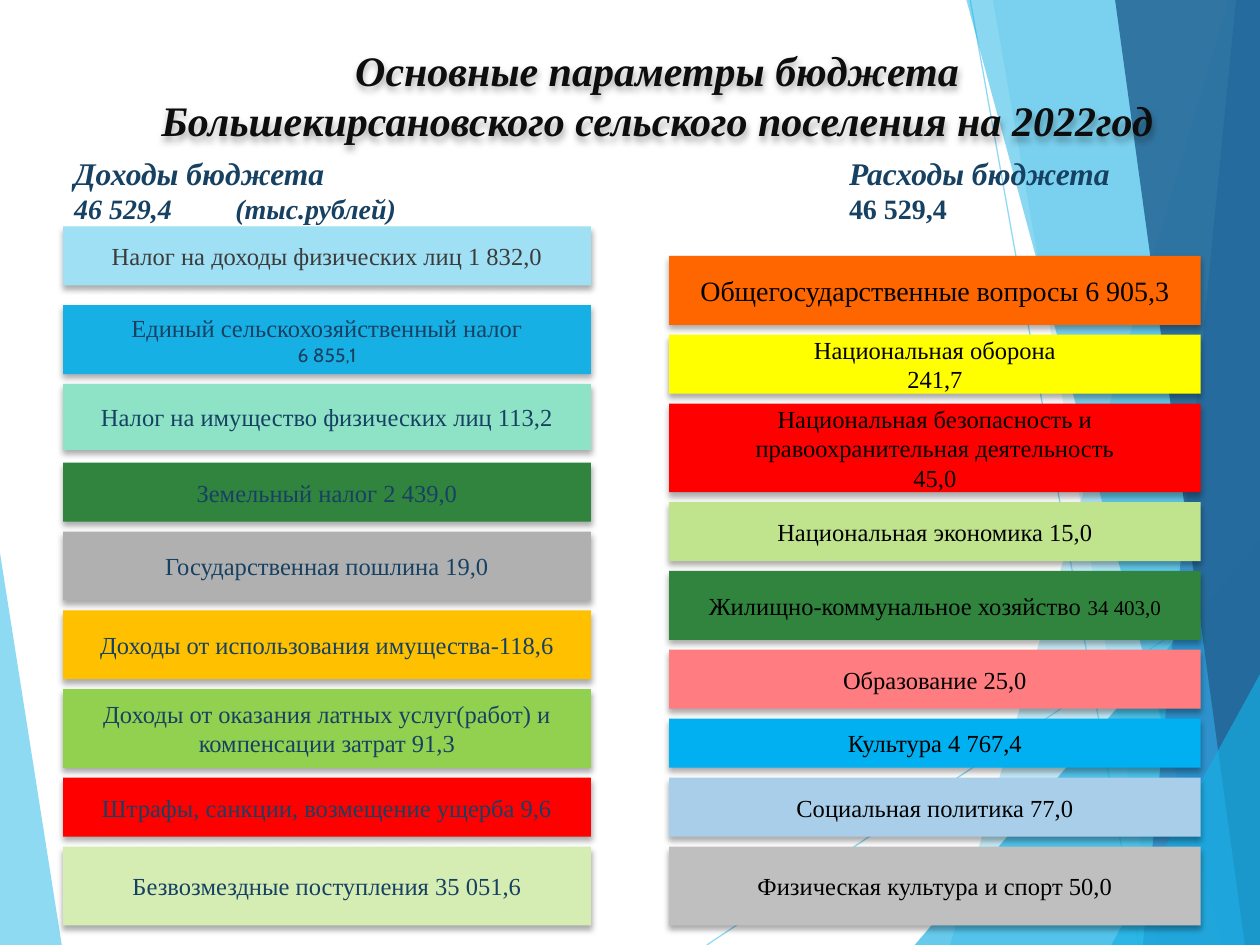
from typing import NamedTuple

from lxml.etree import SubElement
from pptx import Presentation
from pptx.dml.color import RGBColor
from pptx.enum.shapes import MSO_CONNECTOR, MSO_SHAPE
from pptx.enum.text import MSO_ANCHOR, MSO_AUTO_SIZE, PP_ALIGN
from pptx.oxml.ns import qn
from pptx.util import Inches, Pt

SERIF = "Times New Roman"
WHITE = RGBColor(0xFF, 0xFF, 0xFF)
BLACK = RGBColor(0, 0, 0)
INK = RGBColor(0x0D, 0x0D, 0x0D)
GRAY = RGBColor(0x3B, 0x3B, 0x3B)
NAVY = RGBColor(0x17, 0x41, 0x62)
SKY = RGBColor(0x5F, 0xCB, 0xEF)
AZURE = RGBColor(0x17, 0xB0, 0xE4)
BLUE = RGBColor(0x2E, 0x83, 0xC3)
DEEP = RGBColor(0x22, 0x62, 0x92)
PALE = RGBColor(0x9F, 0xE0, 0xF5)
MINT = RGBColor(0x8E, 0xE3, 0xC7)
GREEN = RGBColor(0x31, 0x84, 0x3D)
SILVER = RGBColor(0xB0, 0xB0, 0xB0)
GOLD = RGBColor(0xFF, 0xC0, 0x00)
LIME = RGBColor(0x92, 0xD0, 0x50)
RED = RGBColor(0xFF, 0x00, 0x00)
CREAM = RGBColor(0xD5, 0xED, 0xB3)
ORANGE = RGBColor(0xFF, 0x66, 0x00)
YELLOW = RGBColor(0xFF, 0xFF, 0x00)
LEAF = RGBColor(0xC0, 0xE3, 0x8D)
PINK = RGBColor(0xFF, 0x7C, 0x80)
CYAN = RGBColor(0x00, 0xB0, 0xF0)
MIST = RGBColor(0xA8, 0xCE, 0xEA)
STONE = RGBColor(0xBF, 0xBF, 0xBF)

WIDE, TALL = 10, 7.5
UNIT = TALL / 96


class Line(NamedTuple):
    """One paragraph, with an optional tail of another size."""
    text: str
    size: int = 14
    face: str = SERIF
    bold: bool = False
    slant: bool = False
    tail: str = ""
    small: int = 12


class Bar(NamedTuple):
    """One budget item, with top and height in grid units."""
    top: int
    rows: float
    fill: RGBColor
    lines: list
    ink: RGBColor


INCOME = [
    Bar(23, 6, PALE, [Line("Налог на доходы физических лиц 1 832,0")], GRAY),
    Bar(31, 7, AZURE, [Line("Единый сельскохозяйственный налог"),
                       Line("6 855,1", 11, "Cabin")], NAVY),
    Bar(39, 6.7, MINT, [Line("Налог на имущество физических лиц 113,2")], NAVY),
    Bar(47, 6, GREEN, [Line("Земельный налог 2 439,0")], NAVY),
    Bar(54, 7, SILVER, [Line("Государственная пошлина 19,0")], NAVY),
    Bar(62, 7, GOLD, [Line("Доходы от использования имущества-118,6")], NAVY),
    Bar(70, 8, LIME, [Line("Доходы от оказания латных услуг(работ) и компенсации затрат 91,3")], NAVY),
    Bar(79, 6, RED, [Line("Штрафы, санкции, возмещение ущерба 9,6")], NAVY),
    Bar(86, 8, CREAM, [Line("Безвозмездные поступления 35 051,6")], NAVY),
]
SPENDING = [
    Bar(26, 7, ORANGE, [Line("Общегосударственные вопросы 6 905,3", 16)], BLACK),
    Bar(34, 6, YELLOW, [Line("Национальная оборона"), Line("241,7")], BLACK),
    Bar(41, 9, RED, [Line("Национальная безопасность и правоохранительная деятельность"),
                     Line("45,0")], BLACK),
    Bar(51, 6, LEAF, [Line("Национальная экономика 15,0")], BLACK),
    Bar(58, 7, GREEN, [Line("Жилищно-коммунальное хозяйство ", tail="34 403,0")], BLACK),
    Bar(66, 6, PINK, [Line("Образование 25,0")], BLACK),
    Bar(73, 5, CYAN, [Line("Культура 4 767,4")], BLACK),
    Bar(79, 6, MIST, [Line("Социальная политика 77,0")], BLACK),
    Bar(86, 8, STONE, [Line("Физическая культура и спорт 50,0")], BLACK),
]
RAYS = [((5.61, TALL), (WIDE, 4.57)), ((7.7, 0), (9.04, TALL))]
EDGE = [((0, 4.39), (0.49, TALL), (0, TALL))]
SHARDS = [
    (SKY, 36, 9.75, 0, 7.54),
    (SKY, 20, 7.88, 0, 9.19),
    (AZURE, 66, WIDE, 4.29, 7.26),
    (AZURE, 50, 7.67, 0, 9.7),
    (BLUE, 70, 9.81, 0, 9.07),
    (DEEP, 82, 8.85, 0, 9.88),
    (AZURE, 66, WIDE, 5.35, 8.82),
]


def fade(part, alpha):
    """Set the opacity of the solid colour in a fill or line, in percent."""
    tint = next(part.iter(qn("a:srgbClr")))
    SubElement(tint, qn("a:alpha"), val=str(alpha * 1000))


def shade(shape):
    """Give a shape a soft shadow that falls straight down."""
    shape.shadow.inherit = False
    effects = shape._element.spPr.find(qn("a:effectLst"))
    drop = SubElement(effects, qn("a:outerShdw"), blurRad=str(Pt(3.5)),
                      dist=str(Pt(2.2)), dir="5400000", rotWithShape="0")
    tint = SubElement(drop, qn("a:srgbClr"), val="000000")
    SubElement(tint, qn("a:alpha"), val="32000")


def write(frame, lines, ink, align):
    """Fill a text frame with styled lines."""
    frame.word_wrap = True
    for index, line in enumerate(lines):
        para = frame.add_paragraph() if index else frame.paragraphs[0]
        para.alignment = align
        font = para.font
        font.name, font.size = line.face, Pt(line.size)
        font.bold, font.italic = line.bold, line.slant
        font.color.rgb = ink
        para.add_run().text = line.text
        if line.tail:
            run = para.add_run()
            run.text = line.tail
            run.font.size = Pt(line.small)


def add_shard(shapes, points, color, alpha):
    """Draw one translucent polygon."""
    spots = [(Inches(x), Inches(y)) for x, y in points]
    pen = shapes.build_freeform(*spots[0])
    pen.add_line_segments(spots[1:])
    shard = pen.convert_to_shape()
    shard.shadow.inherit = False
    shard.fill.solid()
    shard.fill.fore_color.rgb = color
    fade(shard._element.spPr, alpha)
    shard.line.fill.background()


def add_decor(shapes):
    """Draw the rays and shards at the slide edges."""
    add_shard(shapes, EDGE[0], SKY, 70)
    for start, end in RAYS:
        ray = shapes.add_connector(MSO_CONNECTOR.STRAIGHT, *map(Inches, start + end))
        ray.line.color.rgb = SKY
        ray.line.width = Pt(0.75)
        fade(ray.line._ln, 70)
        SubElement(ray._element.spPr, qn("a:effectLst"))
    for color, alpha, head, top, foot in SHARDS:
        points = [(head, top), (foot, TALL), (WIDE, TALL), (WIDE, top)]
        add_shard(shapes, points, color, alpha)


def add_title(shapes, left, top, width, height):
    """Place and format the slide title above the decor."""
    title = shapes.title
    shapes._spTree.append(title._element)
    title.left, title.top = Inches(left), Inches(top)
    title.width, title.height = Inches(width), Inches(height)
    frame = title.text_frame
    frame.auto_size = MSO_AUTO_SIZE.NONE
    frame.vertical_anchor = MSO_ANCHOR.TOP
    lines = ["Основные параметры бюджета",
             "Большекирсановского сельского поселения на 2022год"]
    write(frame, [Line(text, 24, bold=True, slant=True) for text in lines],
          INK, PP_ALIGN.CENTER)
    frame.paragraphs[0]._p.get_or_add_pPr().set("marL", str(Inches(0.17)))
    shade(title)


def add_head(shapes, left, top, width, height, name, total, slant):
    """Write a column heading with its total."""
    box = shapes.add_textbox(*map(Inches, (left, top, width, height)))
    lines = [Line(name, 18, bold=True, slant=True),
             Line(total, 16, bold=True, slant=slant)]
    write(box.text_frame, lines, NAVY, PP_ALIGN.LEFT)
    props = box.text_frame.paragraphs[1]._p.pPr
    tabs = props.makeelement(qn("a:tabLst"))
    SubElement(tabs, qn("a:tab"), pos=str(Inches(1.28)), algn="l")
    props.find(qn("a:defRPr")).addprevious(tabs)


def add_bars(shapes, left, width, bars):
    """Stack the bars of one column on the vertical grid."""
    for bar in bars:
        box = (left, bar.top * UNIT, width, bar.rows * UNIT)
        shape = shapes.add_shape(MSO_SHAPE.RECTANGLE, *map(Inches, box))
        shade(shape)
        shape.fill.solid()
        shape.fill.fore_color.rgb = bar.fill
        shape.line.fill.background()
        shape.text_frame.vertical_anchor = MSO_ANCHOR.MIDDLE
        write(shape.text_frame, bar.lines, bar.ink, PP_ALIGN.CENTER)


def main():
    """Build the budget slide and save it."""
    deck = Presentation()
    deck.slide_width, deck.slide_height = Inches(WIDE), Inches(TALL)
    slide = deck.slides.add_slide(deck.slide_layouts[5])
    slide.background.fill.solid()
    slide.background.fill.fore_color.rgb = WHITE
    shapes = slide.shapes
    add_decor(shapes)
    add_head(shapes, 0.49, 1.17, 3.18, 0.67, "Доходы бюджета", "46 529,4\t(тыс.рублей)", True)
    add_head(shapes, 6.64, 1.17, 2.66, 0.67, "Расходы бюджета", "46 529,4", False)
    add_bars(shapes, 0.5, 4.19, INCOME)
    add_bars(shapes, 5.31, 4.22, SPENDING)
    add_title(shapes, 0.93, 0.3, 8.4, 0.91)
    deck.save("out.pptx")


if __name__ == "__main__":
    main()
